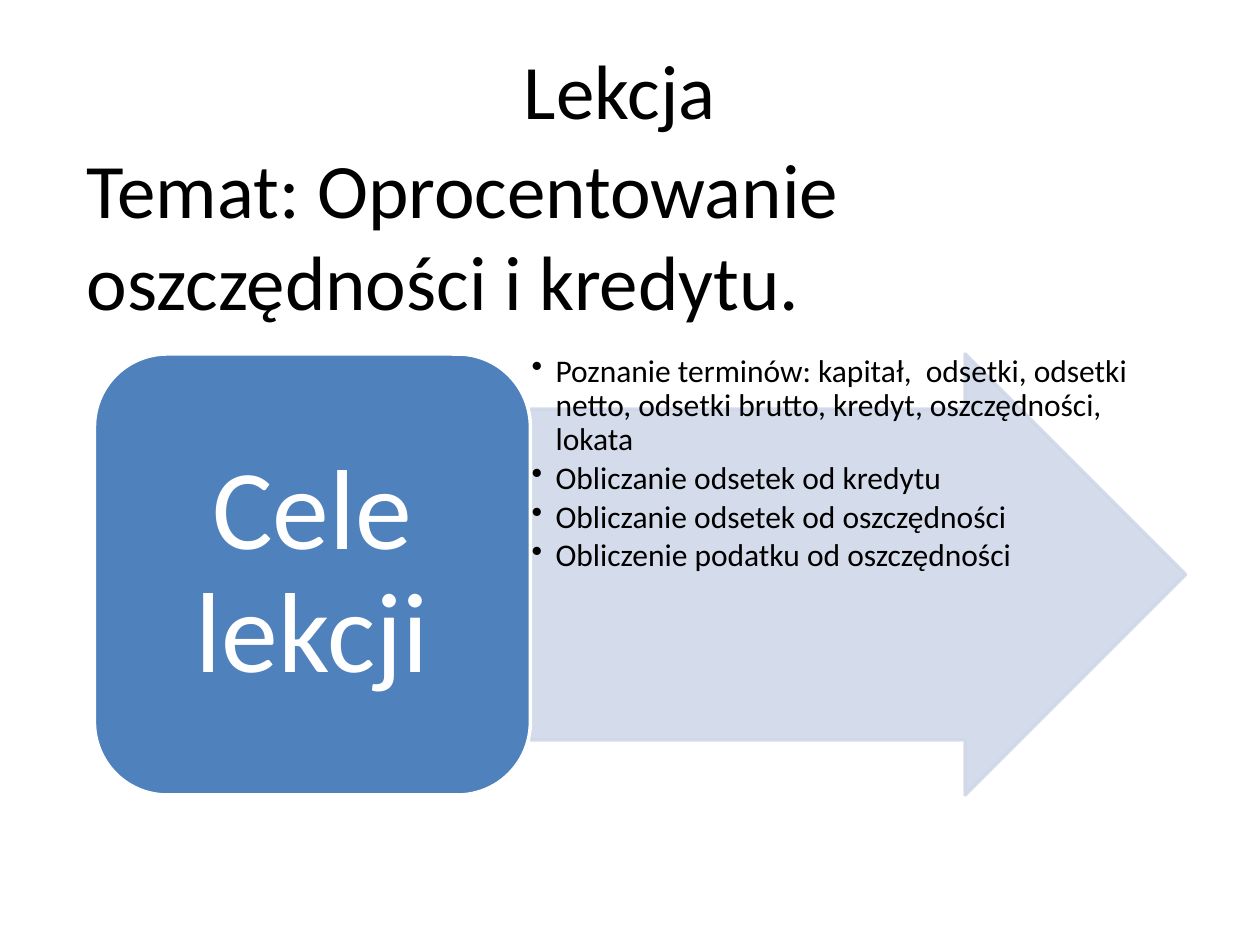
from dataclasses import dataclass

from lxml import etree
from pptx import Presentation
from pptx import util as u
from pptx.dml.color import RGBColor
from pptx.enum import shapes, text
from pptx.oxml.ns import qn


@dataclass(frozen=True)
class Theme:
    font: str = "Calibri"
    ink: str = "000000"
    paper: str = "FFFFFF"
    card: str = "4F81BD"
    arrow: str = "D0D8E8"
    arrow_alpha: int = 90
    line: float = 2
    heading: float = 44
    goal: float = 18
    label: float = 65


@dataclass(frozen=True)
class Box:
    """Position and size in cells of a square grid."""
    col: float
    row: float
    cols: float
    rows: float

    def emu(self) -> tuple:
        return tuple(round(n * CELL) for n in (self.col, self.row, self.cols, self.rows))


@dataclass(frozen=True)
class Heading:
    words: str
    box: Box


THEME = Theme()
WIDTH, HEIGHT = u.Inches(10), u.Inches(7.5)
CELL = WIDTH / 100
ROW, ROWS = 28.1, 35
CARD = Box(7.5, ROW, 34.6, ROWS)
ARROW = Box(CARD.col + CARD.cols, ROW, 52, ROWS)
HEADINGS = (
    Heading("Lekcja", Box(40.6, 2.9, 31.5, 8.4)),
    Heading("Temat: Oprocentowanie oszczędności i kredytu.", Box(5.9, 10.7, 85.8, 15.8)),
)
GOALS = (
    "Poznanie terminów: kapitał,  odsetki, odsetki netto, odsetki brutto, "
    "kredyt, oszczędności, lokata",
    "Obliczanie odsetek od kredytu",
    "Obliczanie odsetek od oszczędności",
    "Obliczenie podatku od oszczędności",
)


def set_margins(tf, x: float, y: float) -> None:
    tf.margin_left = tf.margin_right = u.Inches(x)
    tf.margin_top = tf.margin_bottom = u.Inches(y)


def write(p, words: str, size: float, color: str) -> None:
    p.text = words
    for r in p.runs:
        r.font.name = THEME.font
        r.font.size = u.Pt(size)
        r.font.color.rgb = RGBColor.from_string(color)


def add_text_box(s, box: Box):
    tf = s.shapes.add_textbox(*box.emu()).text_frame
    tf.word_wrap = True
    return tf


def add_block(s, kind, box: Box, fill: str, line: str):
    sp = s.shapes.add_shape(kind, *box.emu())
    sp.shadow.inherit = False
    sp.fill.solid()
    sp.fill.fore_color.rgb = RGBColor.from_string(fill)
    sp.line.color.rgb = RGBColor.from_string(line)
    sp.line.width = u.Pt(THEME.line)
    return sp


def add_bullet(p, indent: float) -> None:
    pPr = p._p.get_or_add_pPr()
    pPr.set("marL", str(u.Inches(indent)))
    pPr.set("indent", str(-u.Inches(indent)))
    etree.SubElement(pPr, qn("a:buChar")).set("char", "•")


def add_arrow(s) -> None:
    sp = add_block(s, shapes.MSO_SHAPE.RIGHT_ARROW, ARROW, THEME.arrow, THEME.arrow)
    sp.adjustments[0], sp.adjustments[1] = 0.75, 0.5
    for color in sp._element.spPr.iter(qn("a:srgbClr")):
        etree.SubElement(color, qn("a:alpha")).set("val", str(THEME.arrow_alpha * 1000))


def add_goals(s) -> None:
    tf = add_text_box(s, ARROW)
    set_margins(tf, 0.01, 0.01)
    for i, goal in enumerate(GOALS):
        p = tf.add_paragraph() if i else tf.paragraphs[0]
        write(p, goal, THEME.goal, THEME.ink)
        p.line_spacing = 0.9
        p.space_after = u.Pt(0.15 * THEME.goal)
        add_bullet(p, 0.19)


def add_card(s) -> None:
    sp = add_block(s, shapes.MSO_SHAPE.ROUNDED_RECTANGLE, CARD, THEME.card, THEME.paper)
    tf = sp.text_frame
    tf.word_wrap = True
    tf.vertical_anchor = text.MSO_ANCHOR.MIDDLE
    set_margins(tf, 0.1, 0)
    p = tf.paragraphs[0]
    write(p, "Cele lekcji", THEME.label, THEME.paper)
    p.alignment = text.PP_ALIGN.CENTER
    p.line_spacing = 0.9


def main() -> None:
    prs = Presentation()
    prs.slide_width, prs.slide_height = WIDTH, HEIGHT
    s = prs.slides.add_slide(prs.slide_layouts[6])
    for heading in HEADINGS:
        tf = add_text_box(s, heading.box)
        write(tf.paragraphs[0], heading.words, THEME.heading, THEME.ink)
    add_arrow(s)
    add_goals(s)
    add_card(s)
    prs.save("out.pptx")


if __name__ == "__main__":
    main()
